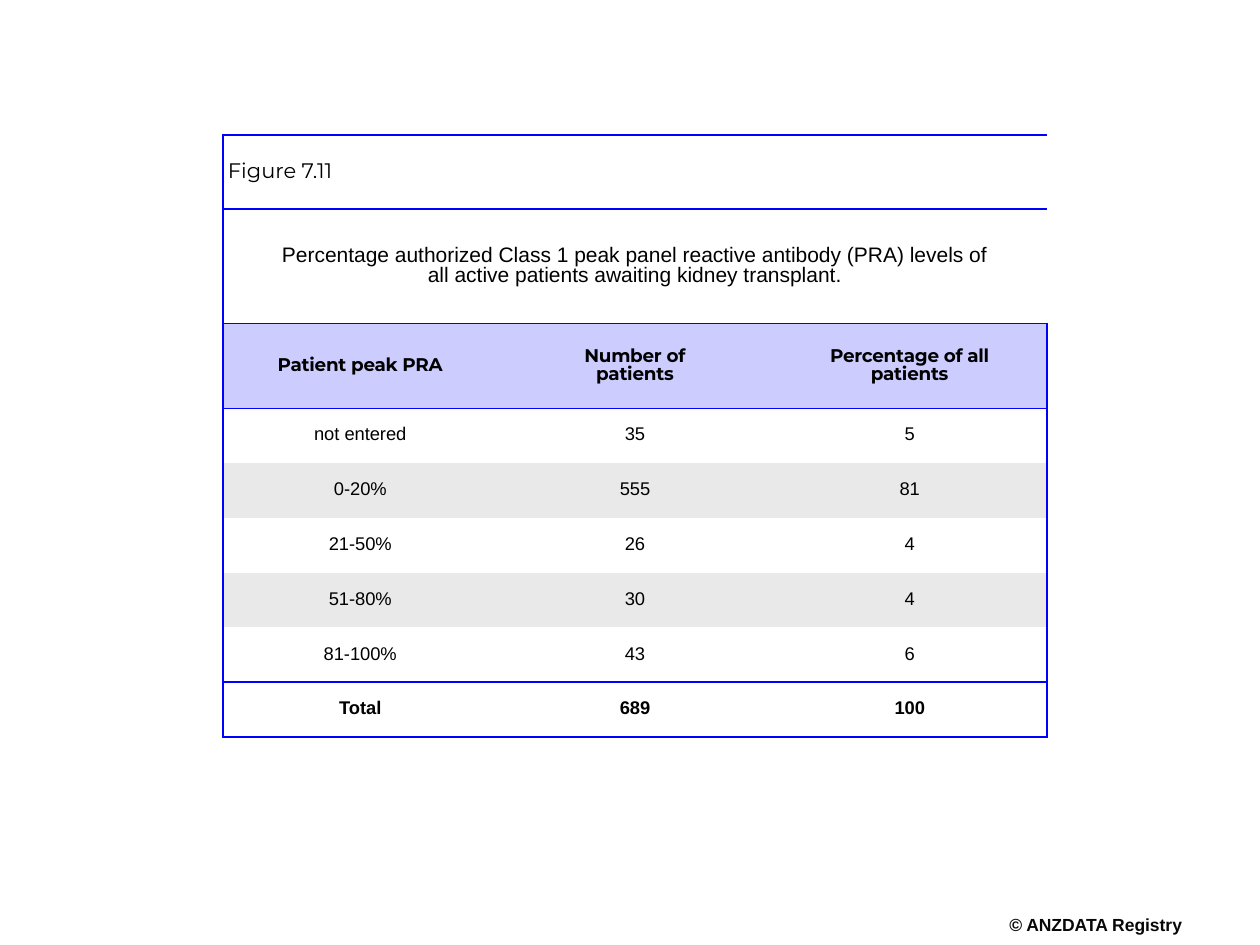
from dataclasses import dataclass

from lxml import etree
from pptx import Presentation
from pptx.dml.color import RGBColor
from pptx.enum.text import MSO_ANCHOR, PP_ALIGN
from pptx.oxml.ns import qn
from pptx.util import Pt

LEFT = PP_ALIGN.LEFT
CENTER = PP_ALIGN.CENTER
MIDDLE = MSO_ANCHOR.MIDDLE


@dataclass(frozen=True)
class Theme:
    ink: str = "000000"
    note: str = "080808"
    line: str = "0000FF"
    head: str = "CCCCFF"
    band: str = "E9E9E9"
    paper: str = "FFFFFF"
    sans: str = "Arial"
    show: str = "Montserrat"
    title: float = 12
    body: float = 10.5
    foot: float = 10


theme = Theme()


def style(para, face, size, bold, color, align):
    para.alignment = align
    para.line_spacing = 0.85
    para.font.name = face
    para.font.size = Pt(size)
    para.font.bold = bold
    para.font.color.rgb = RGBColor.from_string(color)


def border(cell, side, shown):
    line = etree.SubElement(cell._tc.get_or_add_tcPr(), qn("a:ln" + side), w=str(Pt(1)))
    if shown:
        fill = etree.SubElement(line, qn("a:solidFill"))
        etree.SubElement(fill, qn("a:srgbClr"), val=theme.line)
    else:
        etree.SubElement(line, qn("a:noFill"))


deck = Presentation()
deck.slide_width = Pt(720)
deck.slide_height = Pt(540)
slide = deck.slides.add_slide(deck.slide_layouts[6])

rows = [
    ["Figure 7.11", "", ""],
    ["Percentage authorized Class 1 peak panel reactive antibody (PRA) levels of "
     "all active patients awaiting kidney transplant.", "", ""],
    ["Patient peak PRA", "Number of\vpatients", "Percentage of all\vpatients"],
    ["not entered", "35", "5"],
    ["0-20%", "555", "81"],
    ["21-50%", "26", "4"],
    ["51-80%", "30", "4"],
    ["81-100%", "43", "6"],
    ["Total", "689", "100"],
]
heights = [42.4, 65.2, 48.6] + [31.3] * 6
last = len(rows) - 1
pads = {1: (28, 1.4), 2: (14.4, 1.4)}
fills = {2: theme.head, 4: theme.band, 6: theme.band}

frame = slide.shapes.add_table(len(rows), 3, Pt(127.4), Pt(77.2), Pt(471), Pt(sum(heights)))
table = frame.table
table.first_row = False
table.horz_banding = False
for col in table.columns:
    col.width = Pt(157)
for row, height in zip(table.rows, heights):
    row.height = Pt(height)

for r, words in enumerate(rows):
    face = theme.show if r in (0, 2) else theme.sans
    size = theme.title if r < 2 else theme.body
    side, edge = pads.get(r, (2.9, 2.9))
    for c, text in enumerate(words):
        cell = table.cell(r, c)
        border(cell, "L", c == 0)
        border(cell, "R", c == 2)
        border(cell, "T", r <= 3 or r == last)
        border(cell, "B", r <= 2 or r >= last - 1)
        cell.fill.solid()
        cell.fill.fore_color.rgb = RGBColor.from_string(fills.get(r, theme.paper))
        cell.vertical_anchor = MIDDLE
        cell.margin_left = cell.margin_right = Pt(side)
        cell.margin_top = cell.margin_bottom = Pt(edge)
        if text:
            para = cell.text_frame.paragraphs[0]
            para.text = text
            style(para, face, size, r in (2, last), theme.ink, CENTER if r else LEFT)
            if r == 2:
                for run in para.runs:
                    run._r.get_or_add_rPr().set("spc", "-10")

for r in range(2):
    table.cell(r, 0).merge(table.cell(r, 2))

note = slide.shapes.add_textbox(Pt(575.3), Pt(524), Pt(101.5), Pt(12.2)).text_frame
note.margin_left = note.margin_right = note.margin_top = note.margin_bottom = 0
note.word_wrap = False
para = note.paragraphs[0]
para.text = "© ANZDATA Registry"
style(para, theme.sans, theme.foot, True, theme.note, CENTER)

deck.save("out.pptx")
